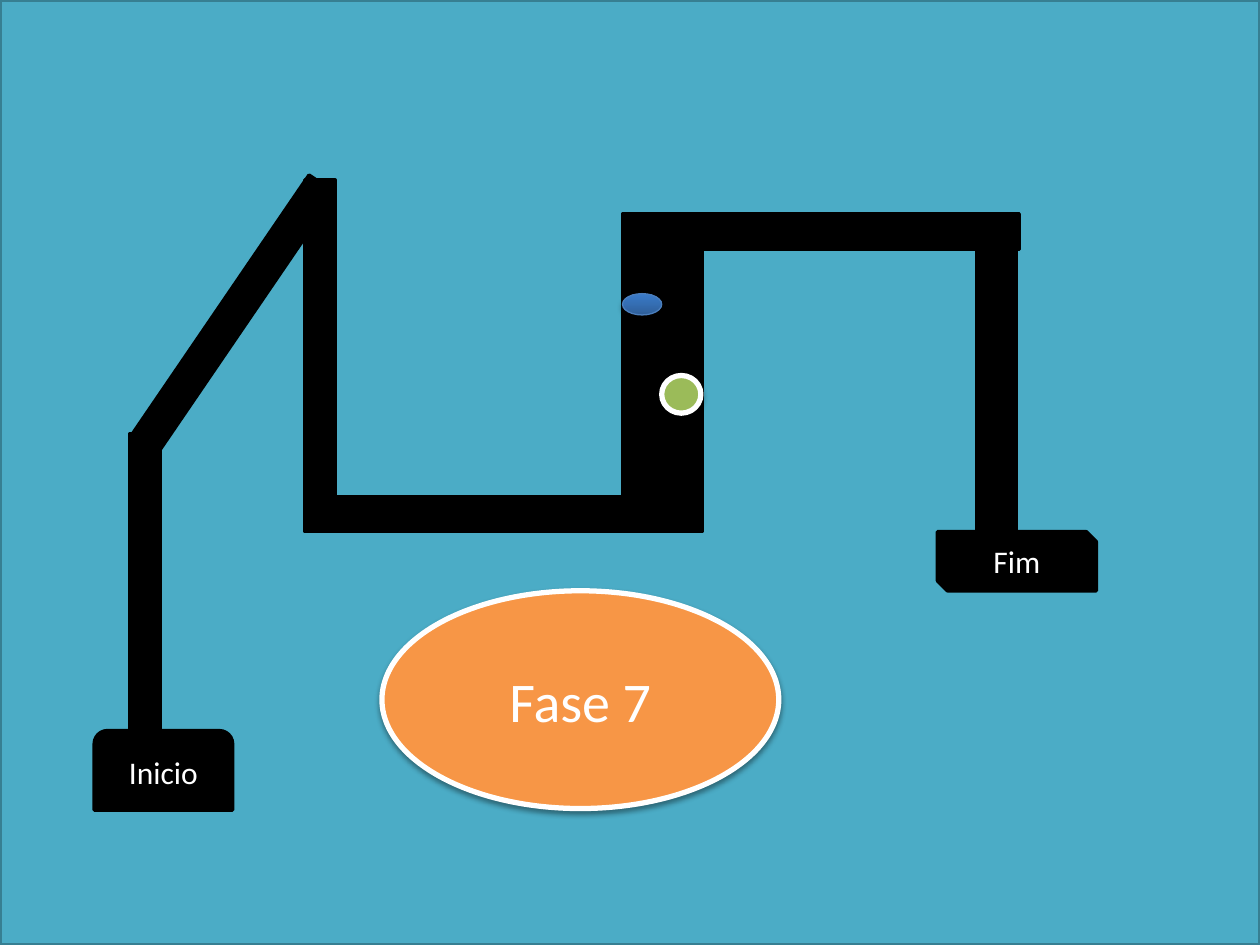
from dataclasses import dataclass

from lxml import etree
from pptx import Presentation
from pptx import util as u
from pptx.dml.color import RGBColor
from pptx.enum import shapes, text
from pptx.oxml import ns

KIND = shapes.MSO_SHAPE


@dataclass(frozen=True)
class Theme:
    water: str = "4BACC6"
    water_edge: str = "377F92"
    wall: str = "000000"
    white: str = "FFFFFF"
    title: str = "F79646"
    ball: str = "9BBB59"
    gate: tuple = ("2F5F99", "3A7CCB")
    gate_edge: str = "4B7EBC"
    font: str = "Calibri"
    label_size: int = 18
    title_size: int = 32
    edge: float = 2
    thick_edge: float = 3
    thin_edge: float = 0.75


THEME = Theme()


def add_shadow(shape, opacity, distance):
    """Cast a soft black shadow straight down."""
    effects = shape._element.spPr.find(ns.qn("a:effectLst"))
    shadow = etree.SubElement(
        effects, ns.qn("a:outerShdw"), blurRad=str(u.Pt(3.1)),
        dist=str(u.Pt(distance)), dir="5400000", rotWithShape="0")
    color = etree.SubElement(shadow, ns.qn("a:srgbClr"), val="000000")
    etree.SubElement(color, ns.qn("a:alpha"), val=str(opacity * 1000))


def add_label(shape, words, size):
    frame = shape.text_frame
    frame.vertical_anchor = text.MSO_ANCHOR.MIDDLE
    paragraph = frame.paragraphs[0]
    paragraph.alignment = text.PP_ALIGN.CENTER
    run = paragraph.add_run()
    run.text = words
    for name, value in {"name": THEME.font, "size": u.Pt(size)}.items():
        setattr(run.font, name, value)
    run.font.color.rgb = RGBColor.from_string(THEME.white)


def add_part(slide, kind, box, fill, line, width, rotation=0):
    """Draw one shape in a box of (left, top, width, height) in cm."""
    shape = slide.shapes.add_shape(kind, *(u.Cm(length) for length in box))
    shape.rotation = rotation
    if isinstance(fill, tuple):
        shape.fill.gradient()
        shape.fill.gradient_angle = 90
        for stop, color in zip(shape.fill.gradient_stops, fill):
            stop.color.rgb = RGBColor.from_string(color)
    else:
        shape.fill.solid()
        shape.fill.fore_color.rgb = RGBColor.from_string(fill)
    shape.line.color.rgb = RGBColor.from_string(line)
    shape.line.width = u.Pt(width)
    shape.shadow.inherit = False
    return shape


def within(box, part):
    """Shift a part's box by the corner of its region."""
    return box[0] + part[0], box[1] + part[1], part[2], part[3]


def add_background(slide, box):
    add_part(slide, KIND.RECTANGLE, box, THEME.water, THEME.water_edge, THEME.edge)


def add_maze(slide, box):
    # Corridors, all of one length
    length = 6.4
    corridors = [
        ((0.72, 5.59, 0.61, length), 0),
        ((2.47, 0, 0.64, length), 214.3),
        ((4.25, 0.48, 0.61, length), 0),
        ((10.65, 1.17, 1.6, length), 0),
        ((4.25, 6.86, length, 0.71), 0),
        ((12.25, 1.17, length, 0.71), 0),
        ((17.79, 1.22, 0.79, length), 0),
    ]
    for part, rotation in corridors:
        add_part(slide, KIND.RECTANGLE, within(box, part),
                 THEME.wall, THEME.wall, THEME.edge, rotation)

    # Obstacles in the wide corridor
    gate = add_part(slide, KIND.OVAL, within(box, (10.65, 2.77, 0.79, 0.43)),
                    THEME.gate, THEME.gate_edge, THEME.thin_edge)
    add_shadow(gate, 35, 1.8)
    ball = add_part(slide, KIND.OVAL, within(box, (11.44, 4.42, 0.79, 0.76)),
                    THEME.ball, THEME.white, THEME.thick_edge)
    add_shadow(ball, 38, 1.6)

    # Start and finish
    ends = [
        ("Inicio", KIND.ROUND_2_SAME_RECTANGLE, (0, 11.58, 2.79, 1.6)),
        ("Fim", KIND.SNIP_2_DIAG_RECTANGLE, (17, 7.57, 3.2, 1.19)),
    ]
    for words, kind, part in ends:
        end = add_part(slide, kind, within(box, part),
                       THEME.wall, THEME.wall, THEME.edge)
        add_label(end, words, THEME.label_size)


def add_title(slide, box):
    title = add_part(slide, KIND.OVAL, box, THEME.title, THEME.white, THEME.thick_edge)
    add_shadow(title, 38, 1.6)
    add_label(title, "Fase 7", THEME.title_size)


def main():
    presentation = Presentation()
    size = {"slide_width": 25.4, "slide_height": 19.05}
    for name, value in size.items():
        setattr(presentation, name, u.Cm(value))
    slide = presentation.slides.add_slide(presentation.slide_layouts[6])
    add_background(slide, (0, 0, *size.values()))
    add_maze(slide, (1.9, 3.15, 20.2, 13.18))
    add_title(slide, (7.7, 11.91, 8, 4.39))
    presentation.save("out.pptx")


if __name__ == "__main__":
    main()
